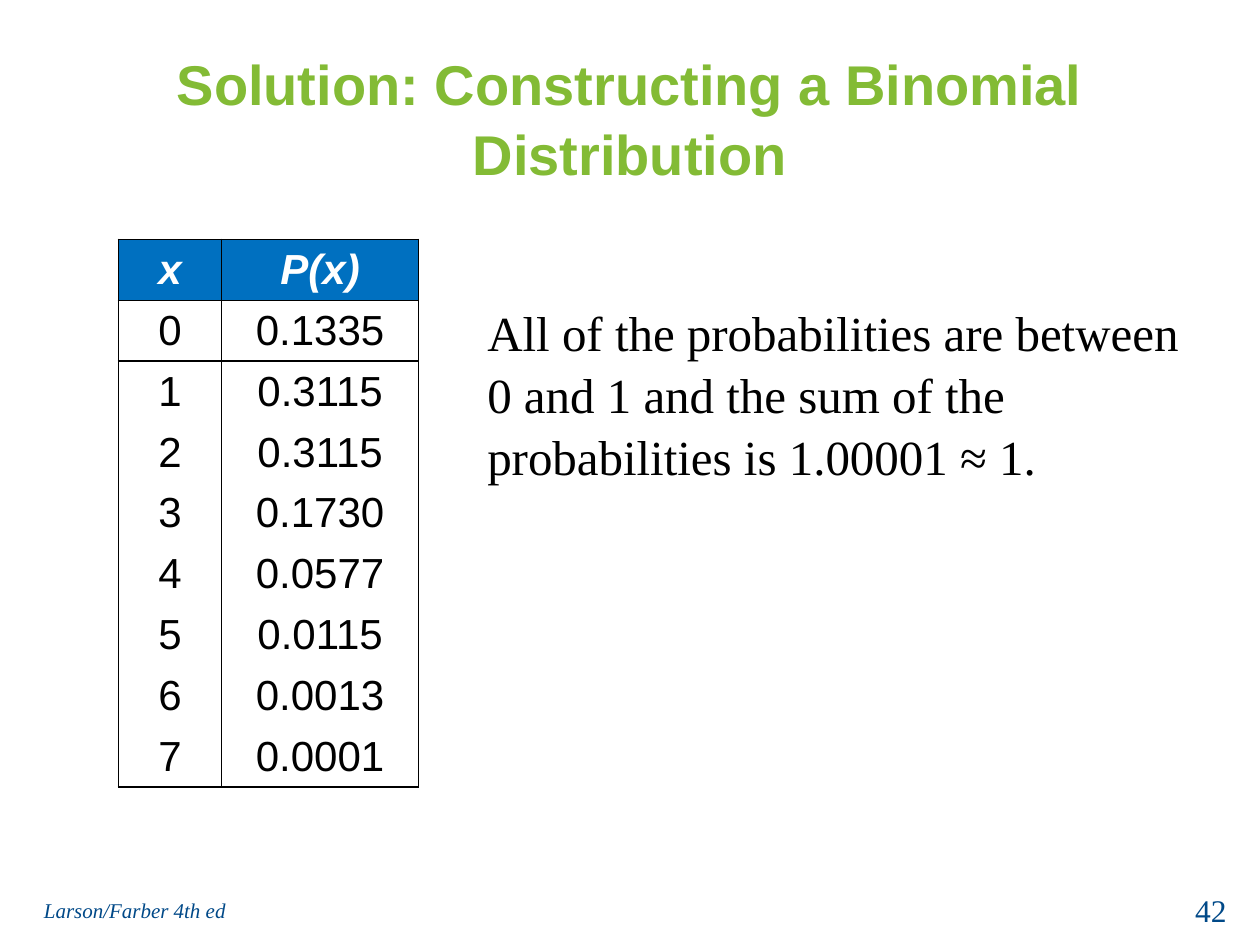
import pptx
import pptx.dml.color
import pptx.enum.text
import pptx.oxml.ns
import pptx.util
from lxml import etree

Pt = pptx.util.Pt
RGBColor = pptx.dml.color.RGBColor
PP_ALIGN = pptx.enum.text.PP_ALIGN
MSO_ANCHOR = pptx.enum.text.MSO_ANCHOR
qn = pptx.oxml.ns.qn

GREEN = RGBColor(0x83, 0xBB, 0x35)
NAVY = RGBColor(0x00, 0x49, 0x88)
BLUE = RGBColor(0x00, 0x70, 0xC0)
BLACK = RGBColor(0, 0, 0)
WHITE = RGBColor(255, 255, 255)

SANS, SERIF = "Arial", "Times New Roman"
PROBABILITIES = ["0.1335", "0.3115", "0.3115", "0.1730",
                 "0.0577", "0.0115", "0.0013", "0.0001"]


def write(tf, text, size, color, font, align=PP_ALIGN.LEFT,
          bold=False, italic=False, spacing=None):
    tf.text = text
    p = tf.paragraphs[0]
    p.alignment = align
    if spacing:
        p.line_spacing = spacing
    f = p.runs[0].font
    f.name, f.size, f.bold, f.italic = font, Pt(size), bold, italic
    f.color.rgb = color


def add_title(s, x, y, w, h):
    sp = s.shapes.title
    sp.left, sp.top, sp.width, sp.height = Pt(x), Pt(y), Pt(w), Pt(h)
    tf = sp.text_frame
    tf.word_wrap = True
    tf.auto_size = pptx.enum.text.MSO_AUTO_SIZE.NONE
    tf.vertical_anchor = MSO_ANCHOR.MIDDLE
    write(tf, "Solution: Constructing a Binomial Distribution", 32, GREEN,
          SANS, PP_ALIGN.CENTER, bold=True, spacing=1.05)


def add_text(s, x, y, w, h, text, size, color, anchor=MSO_ANCHOR.TOP, **style):
    tf = s.shapes.add_textbox(Pt(x), Pt(y), Pt(w), Pt(h)).text_frame
    tf.word_wrap = True
    tf.vertical_anchor = anchor
    write(tf, text, size, color, SERIF, **style)


def set_borders(cell, sides):
    """Draw the sides named among L, R, T and B, and clear the others."""
    tcPr = cell._tc.get_or_add_tcPr()
    for side in "LRTB":
        ln = etree.SubElement(tcPr, qn(f"a:ln{side}"), w=str(Pt(1)))
        if side in sides:
            fill = etree.SubElement(ln, qn("a:solidFill"))
            etree.SubElement(fill, qn("a:srgbClr"), val=str(BLACK))
        else:
            etree.SubElement(ln, qn("a:noFill"))


def add_distribution(s, x, y, w, h):
    rows = [("x", "P(x)")] + [(str(i), v) for i, v in enumerate(PROBABILITIES)]
    last = len(rows) - 1
    table = s.shapes.add_table(len(rows), 2, Pt(x), Pt(y), Pt(w), Pt(h)).table
    table.horz_banding = False
    x_width = 59
    table.columns[0].width = Pt(x_width)
    table.columns[1].width = Pt(w - x_width)
    for i, row in enumerate(rows):
        header = i == 0
        # Only the header, the first value row and the last row are ruled off.
        sides = "LR" + ("T" if i <= 1 else "") + ("B" if i in (0, 1, last) else "")
        if i == 2:
            sides += "T"
        for j, text in enumerate(row):
            cell = table.cell(i, j)
            cell.margin_top = cell.margin_bottom = Pt(3)
            cell.vertical_anchor = MSO_ANCHOR.MIDDLE
            write(cell.text_frame, text, 24, WHITE if header else BLACK, SANS,
                  PP_ALIGN.CENTER, bold=header, italic=header)
            set_borders(cell, sides)
            if header:
                cell.fill.solid()
                cell.fill.fore_color.rgb = BLUE
            else:
                cell.fill.background()


def add_footer(s, x, y, w, h):
    number_width = 168
    add_text(s, x, y, 228, h, "Larson/Farber 4th ed", 12, NAVY,
             MSO_ANCHOR.MIDDLE, italic=True)
    add_text(s, x + w - number_width, y, number_width, h, "42", 18, NAVY,
             align=PP_ALIGN.RIGHT)


def main():
    prs = pptx.Presentation()
    prs.slide_width, prs.slide_height = Pt(720), Pt(540)
    s = prs.slides.add_slide(prs.slide_layouts[5])
    add_title(s, 36, 21.6, 648, 90)
    add_footer(s, 18, 505.5, 690, 28.8)
    add_distribution(s, 67.7, 136.8, 171.5, 306)
    add_text(s, 271.4, 167.8, 413.3, 108.7,
             "All of the probabilities are between 0 and 1 and the sum of the "
             "probabilities is 1.00001 ≈ 1.", 28, BLACK, spacing=1.05)
    prs.save("out.pptx")


if __name__ == "__main__":
    main()
